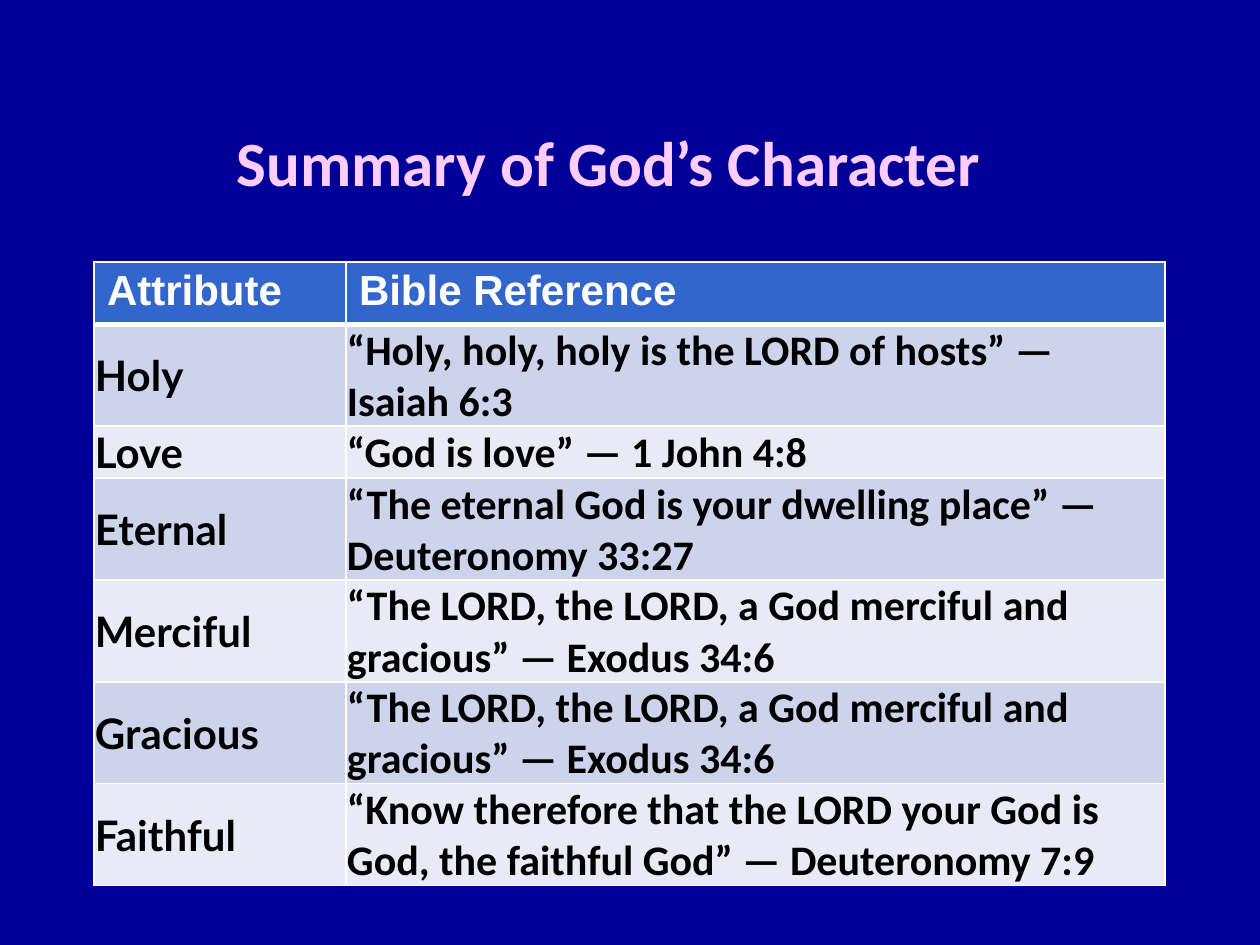
from lxml.etree import SubElement
from pptx import Presentation
from pptx.dml.color import RGBColor
from pptx.enum.text import MSO_ANCHOR, PP_ALIGN
from pptx.oxml.ns import qn
from pptx.util import Pt

EMU_PER_PX = 914400 / 126

NAVY, PINK, WHITE, BLACK = "000099", "FFCCFF", "FFFFFF", "000000"
HEADER_FILL = "3366CC"
BAND_FILLS = ["CED3EC", "E8EAF6"]

HEADINGS = ["Attribute", "Bible Reference"]
ATTRIBUTES = [
    ("Holy", "“Holy, holy, holy is the LORD of hosts” — Isaiah 6:3"),
    ("Love", "“God is love” — 1 John 4:8"),
    ("Eternal", "“The eternal God is your dwelling place” — Deuteronomy 33:27"),
    ("Merciful", "“The LORD, the LORD, a God merciful and gracious” — Exodus 34:6"),
    ("Gracious", "“The LORD, the LORD, a God merciful and gracious” — Exodus 34:6"),
    ("Faithful", "“Know therefore that the LORD your God is God, the faithful God” — Deuteronomy 7:9"),
]
COLUMN_WIDTHS = [252, 819]
ROW_HEIGHT = 52

HEADER_FORMAT = {"margin_left": 13, "margin_right": 13, "margin_top": 6, "margin_bottom": 6}
BODY_FORMAT = {"margin_left": 1, "margin_right": 1, "margin_top": 1, "margin_bottom": 0}
BODY_COLUMNS = [("Lato", MSO_ANCHOR.MIDDLE), ("Calibri", MSO_ANCHOR.BOTTOM)]


def px(length):
    return round(length * EMU_PER_PX)


def color(hex_value):
    return RGBColor.from_string(hex_value)


def write_text(text_frame, text, font_name, size, hex_value):
    paragraph = text_frame.paragraphs[0]
    run = paragraph.add_run()
    run.text = text
    for name, value in {"name": font_name, "size": Pt(size), "bold": True}.items():
        setattr(run.font, name, value)
    run.font.color.rgb = color(hex_value)
    return paragraph


def add_title(slide, text):
    shape = slide.shapes.add_textbox(px(73), px(84), px(1071), px(154))
    text_frame = shape.text_frame
    text_frame.word_wrap = True
    text_frame.vertical_anchor = MSO_ANCHOR.MIDDLE
    write_text(text_frame, text, "Calibri", 36, PINK).alignment = PP_ALIGN.CENTER


def set_borders(cell, widths):
    """Draw white cell borders; widths are points by side: L, R, T, B."""
    properties = cell._tc.get_or_add_tcPr()
    for side, width in widths.items():
        line = SubElement(properties, qn(f"a:ln{side}"), w=str(Pt(width)))
        fill = SubElement(line, qn("a:solidFill"))
        SubElement(fill, qn("a:srgbClr"), val=WHITE)


def format_cell(cell, hex_fill, margins, widths):
    for name, value in margins.items():
        setattr(cell, name, px(value))
    set_borders(cell, widths)
    cell.fill.solid()
    cell.fill.fore_color.rgb = color(hex_fill)


def add_attribute_table(slide):
    row_count = len(ATTRIBUTES) + 1
    frame = slide.shapes.add_table(row_count, len(HEADINGS), px(94), px(262),
                                   px(sum(COLUMN_WIDTHS)), px(ROW_HEIGHT * row_count))
    table = frame.table
    for column, width in zip(table.columns, COLUMN_WIDTHS):
        column.width = px(width)

    for column_index, heading in enumerate(HEADINGS):
        cell = table.cell(0, column_index)
        format_cell(cell, HEADER_FILL, HEADER_FORMAT, {"L": 1, "R": 1, "T": 1, "B": 3})
        write_text(cell.text_frame, heading, "Arial", 24, WHITE)

    for row_index, texts in enumerate(ATTRIBUTES, start=1):
        hex_fill = BAND_FILLS[(row_index - 1) % 2]
        top_width = 3 if row_index == 1 else 1
        for column_index, text in enumerate(texts):
            cell = table.cell(row_index, column_index)
            font_name, anchor = BODY_COLUMNS[column_index]
            format_cell(cell, hex_fill, BODY_FORMAT, {"L": 1, "R": 1, "T": top_width, "B": 1})
            cell.vertical_anchor = anchor
            write_text(cell.text_frame, text, font_name, 24, BLACK)


def main():
    presentation = Presentation()
    presentation.slide_width, presentation.slide_height = px(1260), px(945)
    slide = presentation.slides.add_slide(presentation.slide_layouts[6])
    slide.background.fill.solid()
    slide.background.fill.fore_color.rgb = color(NAVY)
    add_title(slide, "Summary of God’s Character")
    add_attribute_table(slide)
    presentation.save("out.pptx")


if __name__ == "__main__":
    main()
